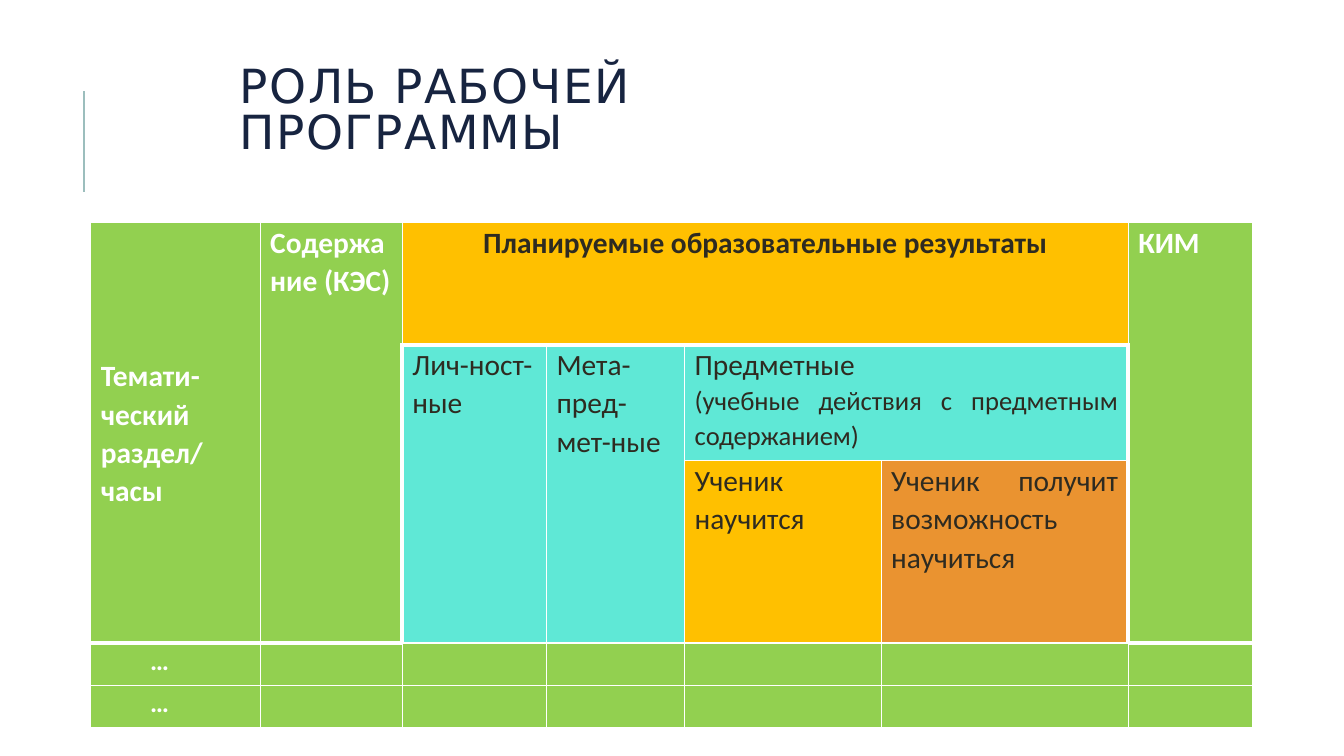
from lxml.etree import SubElement
from pptx import Presentation
from pptx.dml.color import RGBColor as Rgb
from pptx.enum.shapes import MSO_CONNECTOR as Connector
from pptx.enum.text import MSO_ANCHOR as Anchor, PP_ALIGN as Align
from pptx.oxml import parse_xml
from pptx.oxml.ns import nsdecls, qn
from pptx.util import Inches, Pt

COLORS = {
    "white": "FFFFFF", "navy": "172440", "dark": "2E2B21", "rule": "9CBEBD",
    "green": "92D050", "yellow": "FFC000", "aqua": "5FE8D6", "orange": "EA9330",
}
COLUMNS = [1.68, 1.41, 1.43, 1.37, 1.95, 2.45, 1.23]
ROWS = [1.21, 1.15, 1.81, 0.42, 0.42]
HEADING = {"size": Pt(21), "bold": True}
PLAIN = {"size": Pt(21), "bold": False}
SMALL = {"size": Pt(19), "bold": False}
DOTS = {"size": Pt(19), "bold": True}

HEADER_CELLS = [
    (0, 0, 3, 1, "green", "white", "B", [("Темати-ческий раздел/ часы", HEADING)]),
    (0, 1, 3, 1, "green", "white", "B", [("Содержание (КЭС)", HEADING)]),
    (0, 2, 1, 4, "yellow", "dark", "B",
     [("Планируемые образовательные результаты", HEADING)]),
    (0, 6, 3, 1, "green", "white", "B", [("КИМ", HEADING)]),
    (1, 2, 2, 1, "aqua", "dark", "LT", [("Лич-ност-ные", PLAIN)]),
    (1, 3, 2, 1, "aqua", "dark", "T", [("Мета-пред-мет-ные ", PLAIN)]),
    (1, 4, 1, 2, "aqua", "dark", "TR",
     [("Предметные ", PLAIN), ("(учебные действия с предметным содержанием)", SMALL)]),
    (2, 4, 1, 1, "yellow", "dark", "", [("Ученик научится", PLAIN)]),
    (2, 5, 1, 1, "orange", "dark", "R",
     [("Ученик получит возможность научиться", PLAIN)]),
]


def apply(target, values):
    for name, value in values.items():
        setattr(target, name, value)


class SlideBuilder:
    font = "Calibri"
    title_font = "DejaVu Sans"

    def __init__(self, page):
        self.page = page

    def color(self, name):
        return Rgb.from_string(COLORS[name])

    def add_span(self, para, text, color, values):
        span = para.add_run()
        span.text = text
        apply(span.font, {"name": self.font, **values})
        span.font.color.rgb = self.color(color)
        return span

    def title(self, text, left, top, width, height):
        box = self.page.shapes.title
        apply(box, {"left": Inches(left), "top": Inches(top),
                    "width": Inches(width), "height": Inches(height)})
        apply(box.text_frame, {"word_wrap": True, "vertical_anchor": Anchor.MIDDLE})
        para = box.text_frame.paragraphs[0]
        apply(para, {"alignment": Align.LEFT, "line_spacing": 0.8})
        span = self.add_span(para, text, "navy",
                             {"name": self.title_font, "size": Pt(33.6)})
        span.font._element.set("spc", "100")

    def rule(self, x, start, end):
        line = self.page.shapes.add_connector(
            Connector.STRAIGHT, Inches(x), Inches(start), Inches(x), Inches(end))
        line.line.color.rgb = self.color("rule")
        line.line.width = Pt(1.5)
        SubElement(line._element.spPr, qn("a:effectLst"))

    def table(self, left, top, columns, rows):
        frame = self.page.shapes.add_table(
            len(rows), len(columns), Inches(left), Inches(top),
            Inches(sum(columns)), Inches(sum(rows)))
        grid = frame.table
        apply(grid, {"first_row": False, "horz_banding": False})
        for column, width in zip(grid.columns, columns):
            column.width = Inches(width)
        for row, height in zip(grid.rows, rows):
            row.height = Inches(height)
        return grid

    def borders(self, cell, thick):
        properties = cell._tc.get_or_add_tcPr()
        for index, side in enumerate("LRTB"):
            width = Pt(3 if side in thick else 1)
            properties.insert(index, parse_xml(
                f'<a:ln{side} {nsdecls("a")} w="{width}"><a:solidFill>'
                f'<a:srgbClr val="{COLORS["white"]}"/></a:solidFill></a:ln{side}>'))

    def cell(self, grid, row, column, height, width, fill, color, thick, lines,
             align=Align.JUSTIFY, anchor=Anchor.TOP, indent=0):
        for r in range(row, row + height):
            for c in range(column, column + width):
                part = grid.cell(r, c)
                apply(part, {"margin_left": Inches(0.1), "margin_right": Inches(0.1),
                             "margin_top": 0, "margin_bottom": 0,
                             "vertical_anchor": anchor})
                part.fill.solid()
                part.fill.fore_color.rgb = self.color(fill)
                self.borders(part, thick)
        origin = grid.cell(row, column)
        if height * width > 1:
            origin.merge(grid.cell(row + height - 1, column + width - 1))
        for index, (text, values) in enumerate(lines):
            frame = origin.text_frame
            para = frame.add_paragraph() if index else frame.paragraphs[0]
            apply(para, {"alignment": align, "line_spacing": 1.07})
            if indent:
                para._p.get_or_add_pPr().set("indent", str(Inches(indent)))
            self.add_span(para, text, color, values)


def main():
    deck = Presentation()
    apply(deck, {"slide_width": Inches(13.33), "slide_height": Inches(7.5)})
    builder = SlideBuilder(deck.slides.add_slide(deck.slide_layouts[5]))
    builder.rule(0.83, 1.9, 0.9)
    builder.title("РОЛЬ РАБОЧЕЙ ПРОГРАММЫ", 2.28, 0.59, 7.31, 1.06)
    grid = builder.table(0.9, 2.21, COLUMNS, ROWS)
    for values in HEADER_CELLS:
        row, column = values[:2]
        builder.cell(grid, *values,
                     align=Align.CENTER if column == 2 and row == 0 else Align.JUSTIFY,
                     anchor=Anchor.MIDDLE if column == 0 else Anchor.TOP)
    for row in (3, 4):
        for column in range(len(COLUMNS)):
            thick = "T" if row == 3 and column in (0, 1, 6) else ""
            lines = [("…", DOTS)] if column == 0 else []
            builder.cell(grid, row, column, 1, 1, "green", "white", thick, lines,
                         indent=0.49)
    deck.save("out.pptx")


if __name__ == "__main__":
    main()
